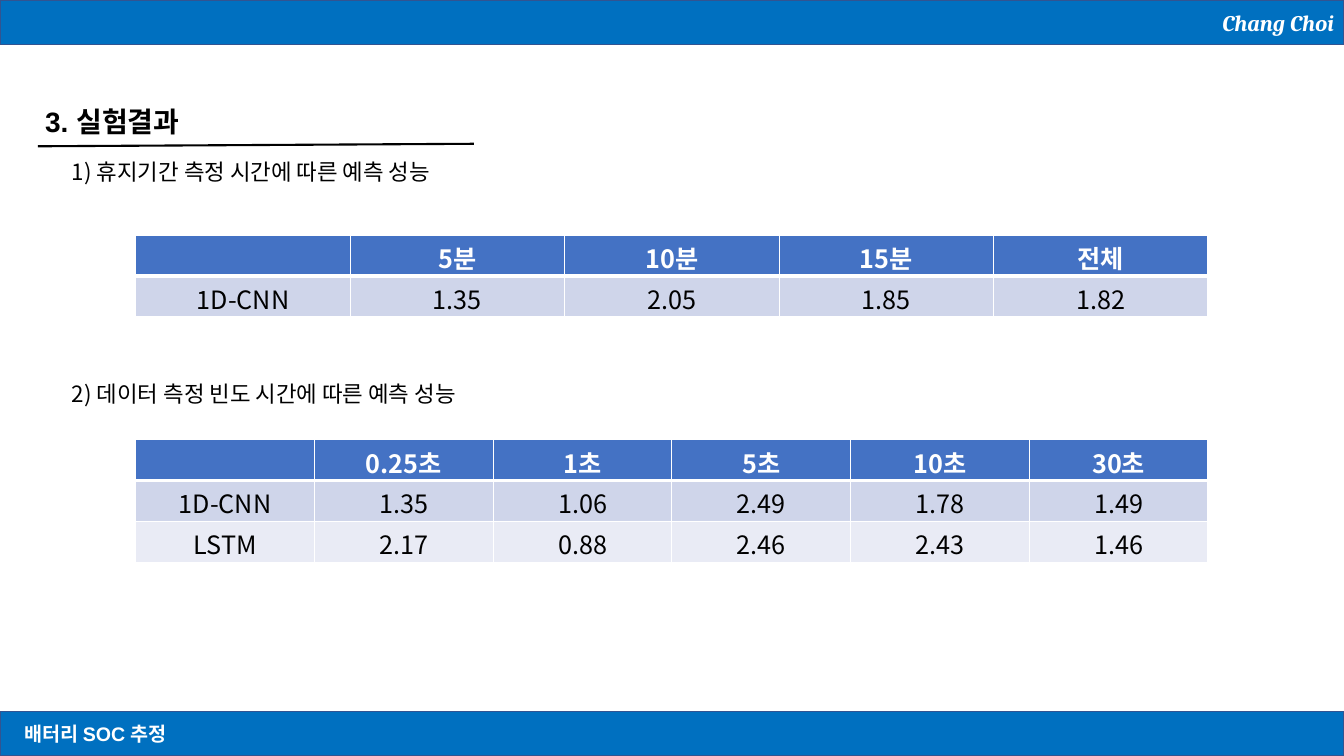
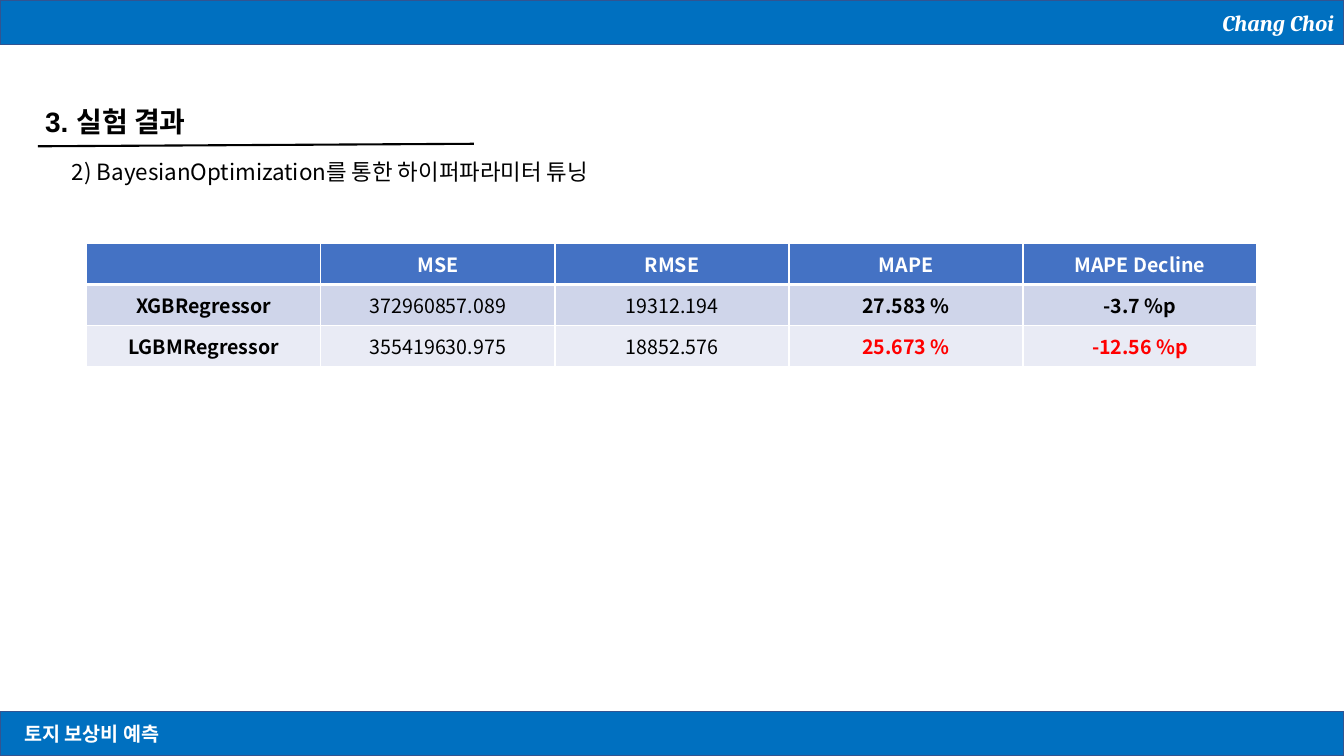
from lxml import etree
from pptx import Presentation
from pptx.dml.color import RGBColor
from pptx.enum.shapes import MSO_CONNECTOR, MSO_SHAPE
from pptx.enum.text import MSO_ANCHOR, MSO_AUTO_SIZE, PP_ALIGN
from pptx.oxml.ns import qn
from pptx.util import Pt

LEFT, CENTER, RIGHT = PP_ALIGN.LEFT, PP_ALIGN.CENTER, PP_ALIGN.RIGHT
TOP, MIDDLE = MSO_ANCHOR.TOP, MSO_ANCHOR.MIDDLE
NO_FIT = MSO_AUTO_SIZE.NONE
RECT, STRAIGHT = MSO_SHAPE.RECTANGLE, MSO_CONNECTOR.STRAIGHT

WHITE = RGBColor(0xFF, 0xFF, 0xFF)
BLACK = RGBColor(0, 0, 0)
RED = RGBColor(0xFF, 0, 0)
BAND_BLUE = RGBColor(0, 0x70, 0xC0)
BAND_EDGE = RGBColor(0x32, 0x54, 0x91)
HEADER_BLUE = RGBColor(0x44, 0x72, 0xC4)
ROW_FILLS = (RGBColor(0xCF, 0xD5, 0xEA), RGBColor(0xE9, 0xEB, 0xF5))

BODY_FONT = "Noto Sans CJK KR"
TITLE_FONT = "Arial"
AUTHOR_FONT = "Cambria"
AUTHOR = "Chang Choi"

SLIDE_W, SLIDE_H = 960, 540
BAND_H = 31.7
ROW_H = 29.2


def add_run(p, text, size, color, font=BODY_FONT, bold=False, italic=False):
    r = p.add_run()
    r.text = text
    f = r.font
    f.size, f.name, f.bold, f.italic = Pt(size), font, bold, italic
    f.color.rgb = color
    latin = r._r.get_or_add_rPr().find(qn("a:latin"))
    ea = etree.Element(qn("a:ea"), typeface=BODY_FONT)
    latin.addnext(ea)


def add_band(s, top, text, size, font, align, italic=False, inset=7.2):
    sp = s.shapes.add_shape(RECT, 0, Pt(top), Pt(SLIDE_W), Pt(BAND_H))
    sp.shadow.inherit = False
    sp.fill.solid()
    sp.fill.fore_color.rgb = BAND_BLUE
    sp.line.color.rgb = BAND_EDGE
    sp.line.width = Pt(1)
    tf = sp.text_frame
    tf.vertical_anchor = MIDDLE
    tf.margin_left = tf.margin_right = Pt(inset)
    p = tf.paragraphs[0]
    p.alignment = align
    add_run(p, text, size, WHITE, font, bold=True, italic=italic)


def add_title(s, text):
    sp = s.shapes.title
    sp.left, sp.top, sp.width, sp.height = Pt(25), Pt(71), Pt(620), Pt(32)
    tf = sp.text_frame
    tf.auto_size = NO_FIT
    tf.vertical_anchor = TOP
    p = tf.paragraphs[0]
    p.alignment = LEFT
    add_run(p, text, 20, BLACK, TITLE_FONT, bold=True)


def add_title_rule(s):
    line = s.shapes.add_connector(STRAIGHT, Pt(27), Pt(104.5), Pt(338.5), Pt(102.7))
    line.line.color.rgb = BLACK
    line.line.width = Pt(1.5)
    etree.SubElement(line._element.spPr, qn("a:effectLst"))


def add_heading(s, top, text):
    tf = s.shapes.add_textbox(Pt(44.3), Pt(top), Pt(500), Pt(26.6)).text_frame
    tf.word_wrap = True
    add_run(tf.paragraphs[0], text, 16, BLACK)


def set_borders(cell, top, bottom):
    tcPr = cell._tc.get_or_add_tcPr()
    for side, width in (("L", 1), ("R", 1), ("T", top), ("B", bottom)):
        ln = etree.SubElement(tcPr, qn("a:ln" + side), w=str(Pt(width)))
        fill = etree.SubElement(ln, qn("a:solidFill"))
        etree.SubElement(fill, qn("a:srgbClr"), val=str(WHITE))


def add_table(s, left, top, width, rows, size=18, anchor=TOP, bold_cols=(), red_cells=()):
    n_rows, n_cols = len(rows), len(rows[0])
    frame = s.shapes.add_table(n_rows, n_cols, Pt(left), Pt(top), Pt(width), Pt(ROW_H * n_rows))
    table = frame.table
    for i, row in enumerate(rows):
        table.rows[i].height = Pt(ROW_H)
        header = i == 0
        for j, text in enumerate(row):
            cell = table.cell(i, j)
            set_borders(cell, 3 if i == 1 else 1, 3 if header else 1)
            cell.fill.solid()
            cell.fill.fore_color.rgb = HEADER_BLUE if header else ROW_FILLS[(i - 1) % 2]
            cell.vertical_anchor = anchor
            cell.margin_top = Pt(3 if anchor == TOP else 0)
            cell.margin_bottom = 0
            if text:
                p = cell.text_frame.paragraphs[0]
                p.alignment = CENTER
                color = WHITE if header else RED if (i, j) in red_cells else BLACK
                add_run(p, text, size, color, bold=header or j in bold_cols)


def add_slide(prs, title, project):
    s = prs.slides.add_slide(prs.slide_layouts[5])
    add_band(s, SLIDE_H - BAND_H, project, 14, TITLE_FONT, LEFT, inset=17.3)
    add_title_rule(s)
    add_title(s, title)
    add_band(s, 0, AUTHOR, 16, AUTHOR_FONT, RIGHT, italic=True)
    return s


def main():
    prs = Presentation()
    prs.slide_width, prs.slide_height = Pt(SLIDE_W), Pt(SLIDE_H)

    s = add_slide(prs, "3. 실험결과", "배터리 SOC 추정")
    add_heading(s, 109.4, "1) 휴지기간 측정 시간에 따른 예측 성능")
    add_table(s, 97, 168, 766, [
        ("", "5분", "10분", "15분", "전체"),
        ("1D-CNN", "1.35", "2.05", "1.85", "1.82"),
    ])
    add_heading(s, 268, "2) 데이터 측정 빈도 시간에 따른 예측 성능")
    add_table(s, 97, 314, 766, [
        ("", "0.25초", "1초", "5초", "10초", "30초"),
        ("1D-CNN", "1.35", "1.06", "2.49", "1.78", "1.49"),
        ("LSTM", "2.17", "0.88", "2.46", "2.43", "1.46"),
    ])

    s = add_slide(prs, "3. 실험 결과", "토지 보상비 예측")
    add_heading(s, 109.4, "2) BayesianOptimization를 통한 하이퍼파라미터 튜닝")
    add_table(s, 62, 174, 836, [
        ("", "MSE", "RMSE", "MAPE", "MAPE Decline"),
        ("XGBRegressor", "372960857.089", "19312.194", "27.583 %", "-3.7 %p"),
        ("LGBMRegressor", "355419630.975", "18852.576", "25.673 %", "-12.56 %p"),
    ], size=14, anchor=MIDDLE, bold_cols=(0, 3, 4), red_cells=((2, 3), (2, 4)))

    prs.save("out.pptx")


if __name__ == "__main__":
    main()
